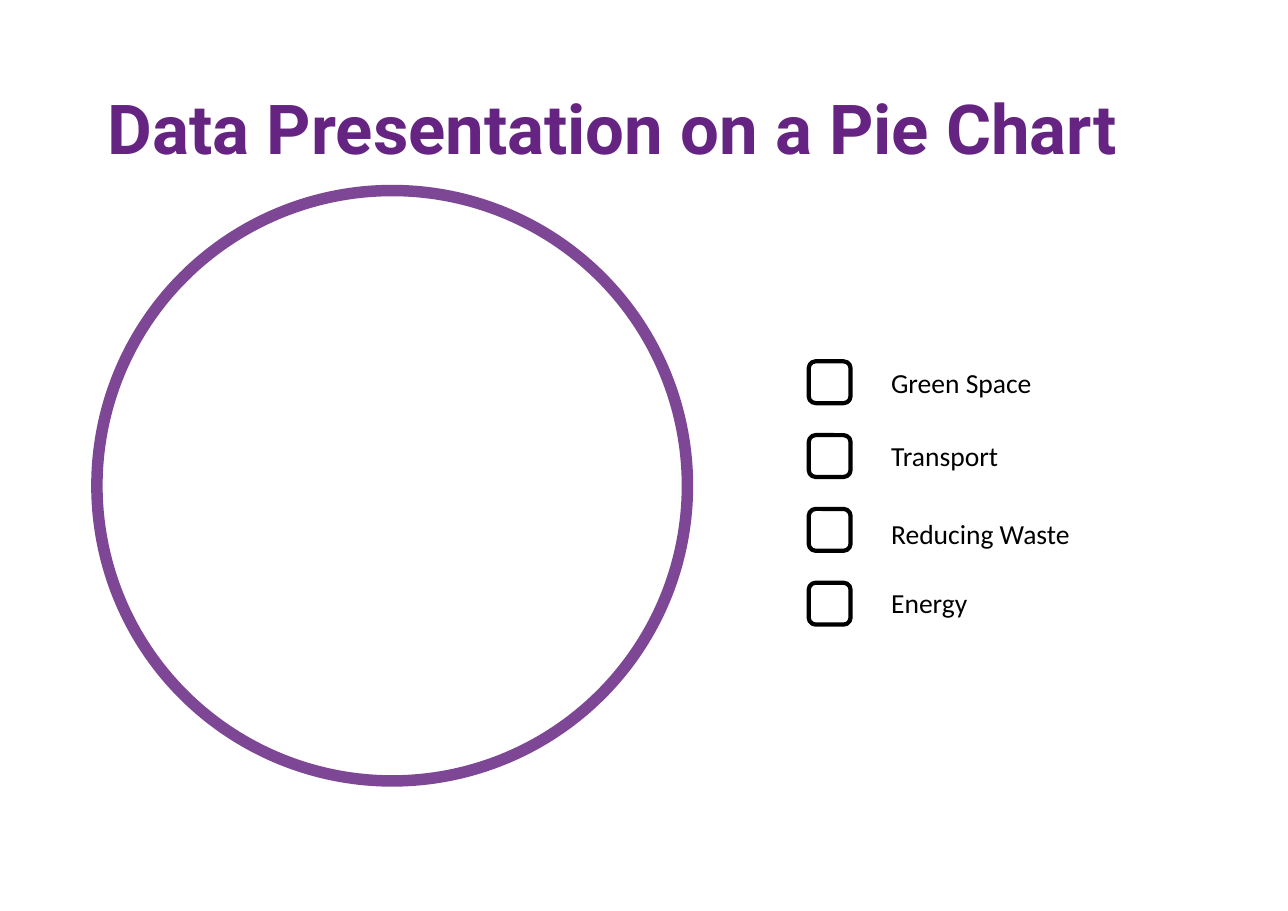
from lxml import etree
from pptx import Presentation
from pptx.dml.color import RGBColor
from pptx.enum.shapes import MSO_SHAPE as Shape
from pptx.enum.text import MSO_ANCHOR as Anchor, PP_ALIGN as Align
from pptx.oxml.ns import qn
from pptx.util import Inches, Pt

PURPLE, BLACK, WHITE = "662482", "000000", "FFFFFF"
LEGEND = [("Green Space", 3.27), ("Transport", 3.94),
          ("Reducing Waste", 4.64), ("Energy", 5.27)]
FIRST_BOX_TOP, BOX_STEP, BOX_SIZE = 3.28, 0.67, 0.38


def colour(hex_code):
    return RGBColor.from_string(hex_code)


def add_span(para, text, font, size, hex_code, bold=False):
    span = para.add_run()
    span.text = text
    span.font.name = font
    span.font.size = Pt(size)
    span.font.bold = bold
    span.font.color.rgb = colour(hex_code)


def set_title(page, text):
    title = page.shapes.title
    title.left, title.top = Inches(0.88), Inches(0.67)
    title.width, title.height = Inches(9.94), Inches(0.92)
    title.text_frame.vertical_anchor = Anchor.BOTTOM
    para = title.text_frame.paragraphs[0]
    para.alignment = Align.LEFT
    para.line_spacing = 0.9
    add_span(para, text, "Roboto", 45, PURPLE, bold=True)


def add_outline(page, kind, left, top, size, line_colour, line_width):
    """Add an unfilled shape of equal width and height."""
    shape = page.shapes.add_shape(kind, Inches(left), Inches(top),
                                  Inches(size), Inches(size))
    shape.shadow.inherit = False
    shape.fill.background()
    shape.line.color.rgb = colour(line_colour)
    shape.line.width = Pt(line_width)
    return shape


def set_line_opacity(shape, percent):
    tint = shape.line._get_or_add_ln().find(".//" + qn("a:srgbClr"))
    etree.SubElement(tint, qn("a:alpha")).set("val", str(percent * 1000))


def add_label(page, text, top):
    box = page.shapes.add_textbox(Inches(7.99), Inches(top),
                                  Inches(2.04), Inches(0.4))
    box.text_frame.word_wrap = True
    add_span(box.text_frame.paragraphs[0], text, "Calibri", 18, BLACK)


def main():
    deck = Presentation()
    deck.slide_width, deck.slide_height = Inches(11.69), Inches(8.27)
    page = deck.slides.add_slide(deck.slide_layouts[5])

    set_title(page, "Data Presentation on a Pie Chart")
    pie = add_outline(page, Shape.OVAL, 0.88, 1.73, 5.36, PURPLE, 7.5)
    pie.fill.solid()
    pie.fill.fore_color.rgb = colour(WHITE)
    set_line_opacity(pie, 83)

    for row, (text, label_top) in enumerate(LEGEND):
        add_outline(page, Shape.ROUNDED_RECTANGLE, 7.34,
                    FIRST_BOX_TOP + row * BOX_STEP, BOX_SIZE, BLACK, 2.75)
        add_label(page, text, label_top)

    deck.save("out.pptx")


if __name__ == "__main__":
    main()
